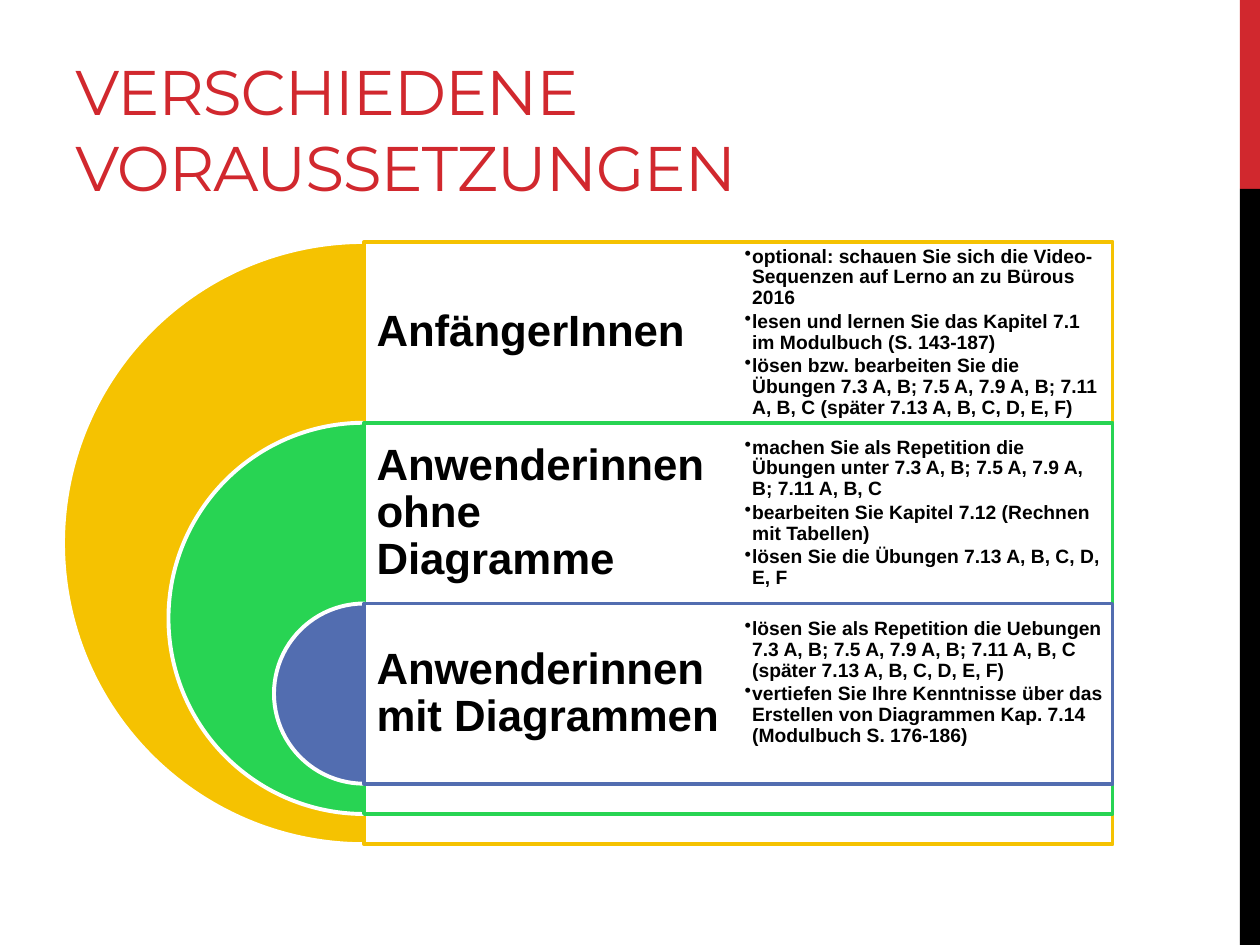
from lxml.etree import SubElement
from pptx import Presentation
from pptx.dml.color import RGBColor
from pptx.enum.shapes import MSO_SHAPE
from pptx.enum.text import MSO_ANCHOR
from pptx.oxml.ns import qn
from pptx.util import Inches, Pt

COLORS = {
    "red": "D1282E",
    "black": "000000",
    "white": "FFFFFF",
    "yellow": "F5C201",
    "green": "28D453",
    "blue": "526DB0",
}

LEVELS = [
    ("yellow", "AnfängerInnen", [
        "optional: schauen Sie sich die Video-Sequenzen auf Lerno an zu Bürous 2016",
        "lesen und lernen Sie das Kapitel 7.1 im Modulbuch (S. 143-187)",
        "lösen bzw. bearbeiten Sie die Übungen 7.3 A, B; 7.5 A, 7.9 A, B; 7.11 A, B, C "
        "(später 7.13 A, B, C, D, E, F)",
    ]),
    ("green", "Anwenderinnen ohne Diagramme", [
        "machen Sie als Repetition die Übungen unter 7.3 A, B; 7.5 A, 7.9 A, B; 7.11 A, B, C",
        "bearbeiten Sie Kapitel 7.12 (Rechnen mit Tabellen)",
        "lösen Sie die Übungen 7.13 A, B, C, D, E, F",
    ]),
    ("blue", "Anwenderinnen mit Diagrammen", [
        "lösen Sie als Repetition die Uebungen 7.3 A, B; 7.5 A, 7.9 A, B; 7.11 A, B, C "
        "(später 7.13 A, B, C, D, E, F)",
        "vertiefen Sie Ihre Kenntnisse über das Erstellen von Diagrammen Kap. 7.14 "
        "(Modulbuch S. 176-186)",
    ]),
]

CENTER, TOP, ROW, COLUMN = 2.89, 1.92, 1.435, 2.97
OUTER, SHRINK = 4.78, 1.675


def rgb(name):
    """Return the named colour."""
    return RGBColor.from_string(COLORS[name])


def add_block(shapes, kind, box, fill, line=None, alpha=None):
    """Add a filled preset shape, optionally outlined and see-through."""
    block = shapes.add_shape(kind, *map(Inches, box))
    block.shadow.inherit = False
    block.fill.solid()
    block.fill.fore_color.rgb = rgb(fill)
    if line:
        block.line.color.rgb = rgb(line)
        block.line.width = Pt(2.25)
    else:
        block.line.fill.background()
    if alpha:
        color = block.fill._xPr.find(qn("a:solidFill"))[0]
        SubElement(color, qn("a:alpha"), val=str(alpha * 1000))
    return block


def add_bullet(para):
    """Give a paragraph a hanging bullet."""
    properties = para._p.get_or_add_pPr()
    properties.set("marL", str(Inches(0.06)))
    properties.set("indent", str(-Inches(0.06)))
    SubElement(properties, qn("a:buChar"), char="•")


def add_text(shapes, texts, box, size, font="Arial", color="black", bold=True,
             anchor=MSO_ANCHOR.MIDDLE, inset=0.1, bottom=None, line_spacing=0.9,
             space_after=0, bullets=False, tracking=None):
    """Add a text box with one paragraph for each text."""
    frame = shapes.add_textbox(*map(Inches, box)).text_frame
    frame.word_wrap = True
    frame.vertical_anchor = anchor
    frame.margin_left = frame.margin_right = frame.margin_top = Inches(inset)
    frame.margin_bottom = Inches(inset if bottom is None else bottom)
    for index, text in enumerate(texts):
        para = frame.paragraphs[0] if index == 0 else frame.add_paragraph()
        para.line_spacing = line_spacing
        para.space_after = Pt(space_after)
        if bullets:
            add_bullet(para)
        span = para.add_run()
        span.text = text
        span.font.name = font
        span.font.size = Pt(size)
        span.font.bold = bold
        span.font.color.rgb = rgb(color)
        if tracking:
            span.font._element.set("spc", str(round(tracking * 100)))


def add_level(shapes, index, color, heading, tasks):
    """Add one half disc with its frame, heading and task list."""
    top = TOP + index * ROW
    height = OUTER - index * SHRINK
    pie = add_block(shapes, MSO_SHAPE.PIE, (CENTER - height / 2, top, height, height),
                    color, "white")
    pie.adjustments[0] = 54
    pie.adjustments[1] = 162
    add_block(shapes, MSO_SHAPE.RECTANGLE, (CENTER, top, 2 * COLUMN, height),
              "white", color, alpha=90)
    add_text(shapes, [heading], (CENTER, top, COLUMN, ROW), 25)
    add_text(shapes, tasks, (CENTER + COLUMN, top, COLUMN, ROW), 11, inset=0.05,
             bottom=0.05 if len(tasks) == 3 else 0.23, space_after=1.65, bullets=True)


def main():
    """Build and save the slide."""
    deck = Presentation()
    deck.slide_width, deck.slide_height = Inches(10), Inches(7.5)
    page = deck.slides.add_slide(deck.slide_layouts[6])
    add_block(page.shapes, MSO_SHAPE.RECTANGLE, (9.84, 0, 0.16, 1.5), "red")
    add_block(page.shapes, MSO_SHAPE.RECTANGLE, (9.84, 1.5, 0.16, 6), "black")
    add_text(page.shapes, ["VERSCHIEDENE VORAUSSETZUNGEN"], (0.5, 0.17, 6.33, 1.5), 36,
             font="Montserrat", color="red", bold=False, anchor=MSO_ANCHOR.BOTTOM,
             bottom=0.05, line_spacing=1.0, tracking=-0.6)
    diagram = page.shapes.add_group_shape()
    for index, level in enumerate(LEVELS):
        add_level(diagram.shapes, index, *level)
    deck.save("out.pptx")


if __name__ == "__main__":
    main()
